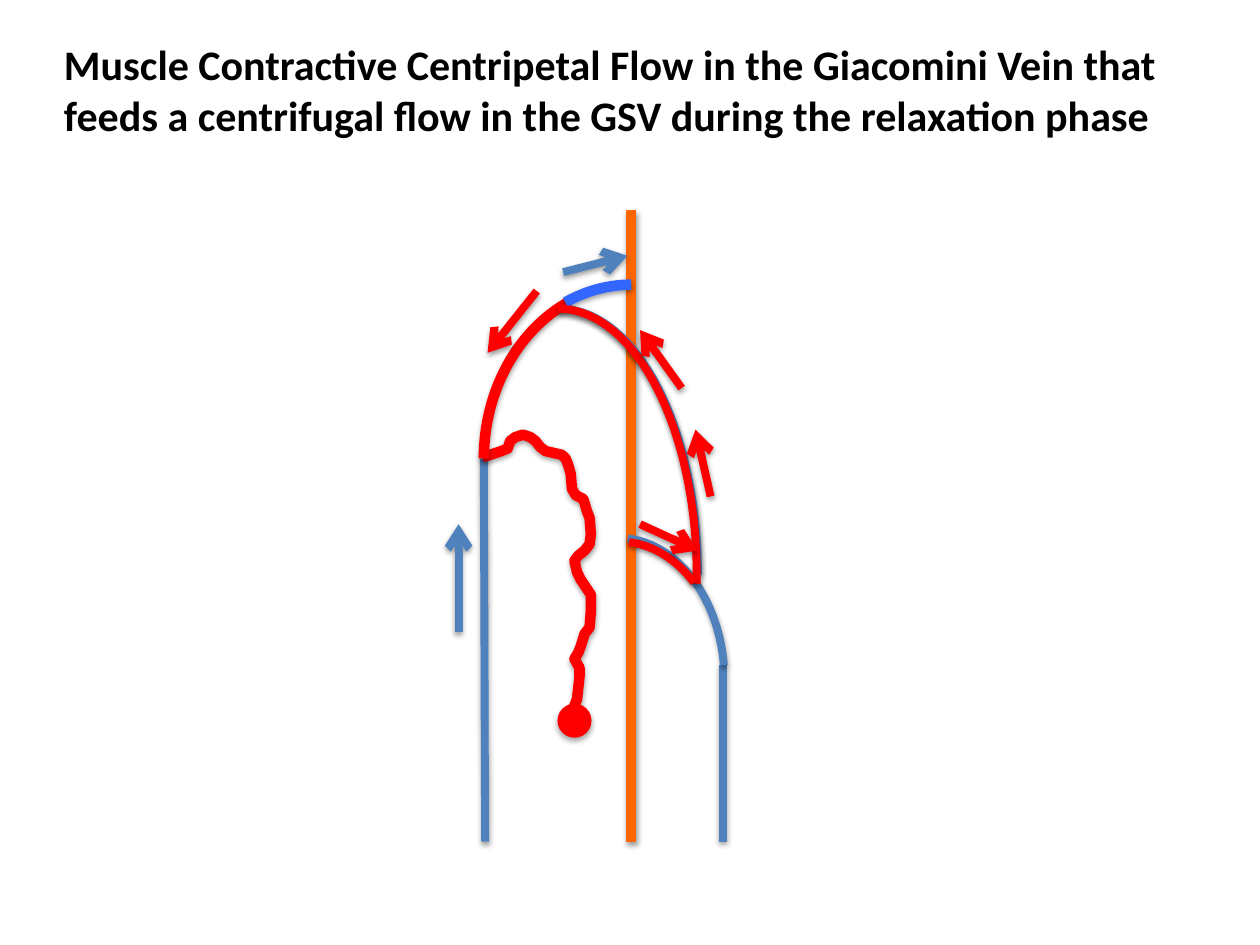
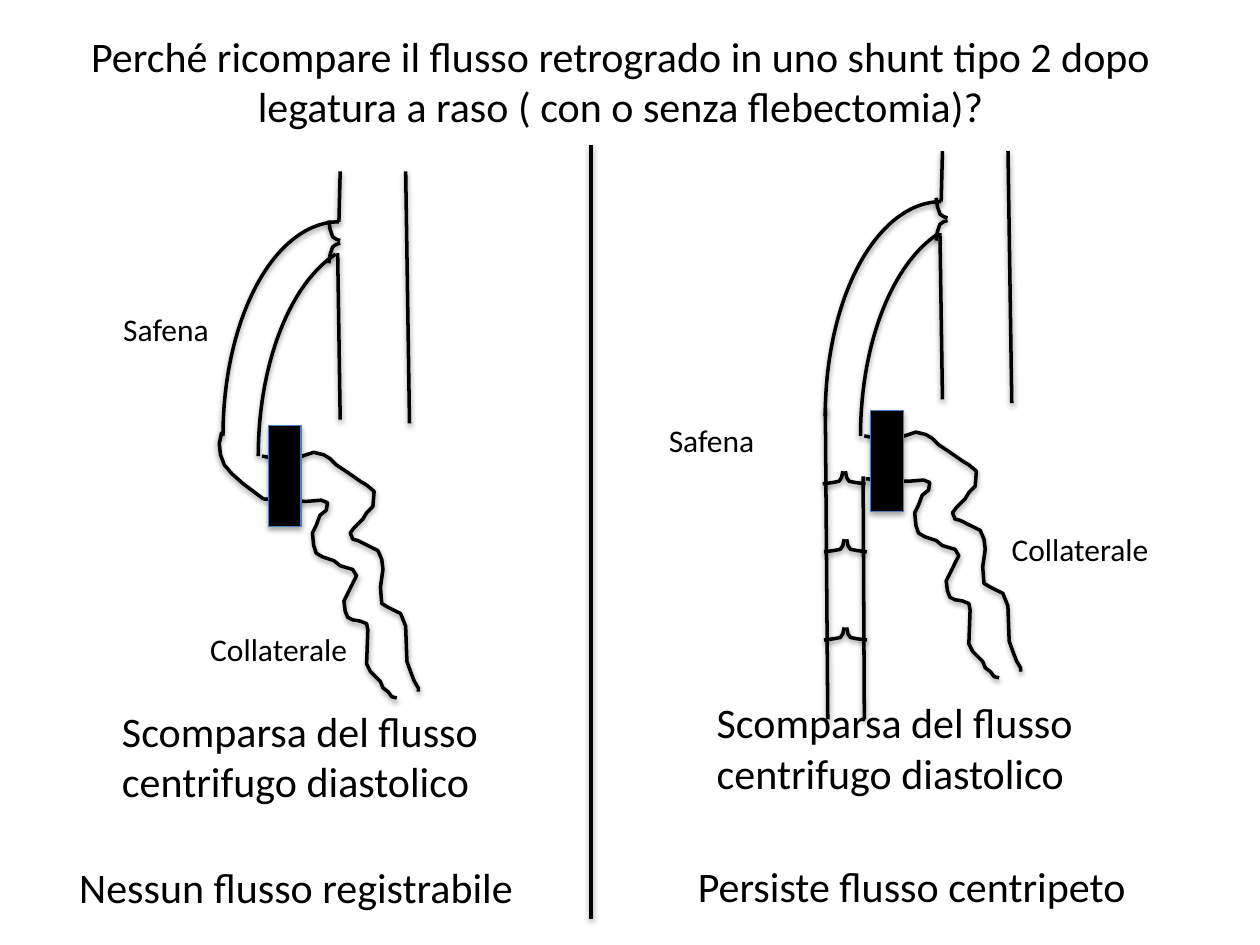
from dataclasses import dataclass
from typing import NamedTuple

from lxml import etree
from pptx import Presentation
from pptx.dml.color import RGBColor
from pptx.enum.shapes import MSO_CONNECTOR, MSO_SHAPE
from pptx.enum.text import MSO_AUTO_SIZE, PP_ALIGN
from pptx.oxml.ns import qn
from pptx.slide import Slide
from pptx.util import Emu, Pt

# Shared look
STRAIGHT = MSO_CONNECTOR.STRAIGHT
ARC, OVAL, RECTANGLE = MSO_SHAPE.ARC, MSO_SHAPE.OVAL, MSO_SHAPE.RECTANGLE
FIT_SHAPE = MSO_AUTO_SIZE.SHAPE_TO_FIT_TEXT
LEFT, CENTER = PP_ALIGN.LEFT, PP_ALIGN.CENTER

BLACK = RGBColor(0x00, 0x00, 0x00)
RED = RGBColor(0xFF, 0x00, 0x00)
BLUE = RGBColor(0x4F, 0x81, 0xBD)
BRIGHT_BLUE = RGBColor(0x33, 0x66, 0xFF)
EDGE_BLUE = RGBColor(0x4B, 0x7E, 0xBC)
ORANGE = RGBColor(0xFF, 0x66, 0x00)

FONT = "Calibri"
LARGE, SMALL = 24, 18
EMU_PER_PX = 9144  # 100 px to the inch
ARC_UNITS_PER_DEGREE = 0.6


def px(length: int) -> Emu:
    return Emu(length * EMU_PER_PX)


class Point(NamedTuple):
    x: int
    y: int


class Frame(NamedTuple):
    left: int
    top: int
    width: int
    height: int


class Stroke(NamedTuple):
    color: RGBColor
    width: float


@dataclass(frozen=True)
class Line:
    start: Point
    end: Point
    stroke: Stroke
    arrow: bool = False


@dataclass(frozen=True)
class Arc:
    frame: Frame
    stroke: Stroke
    start: float = 270
    end: float = 0
    rotation: int = 0
    flipped: bool = False


@dataclass(frozen=True)
class Label:
    frame: Frame
    text: str
    size: int = LARGE
    align: PP_ALIGN = LEFT
    bold: bool = False
    wrap: bool = True


ORIGIN = Point(0, 0)
THIN_BLACK = Stroke(BLACK, 2)
BLUE_VEIN = Stroke(BLUE, 4.5)
RED_VEIN = Stroke(RED, 4.5)
THICK_RED = Stroke(RED, 6)


# Drawing tools
def add_shadow(shape, opacity: int = 38, distance: int = 20000) -> None:
    effects = etree.SubElement(shape._element.spPr, qn("a:effectLst"))
    shadow = etree.SubElement(effects, qn("a:outerShdw"), blurRad="40000",
                              dist=str(distance), dir="5400000", rotWithShape="0")
    color = etree.SubElement(shadow, qn("a:srgbClr"), val=str(BLACK))
    etree.SubElement(color, qn("a:alpha"), val=str(opacity * 1000))


def set_stroke(shape, stroke: Stroke) -> None:
    shape.line.color.rgb = stroke.color
    shape.line.width = Pt(stroke.width)


def draw_line(page: Slide, line: Line, shift: Point = ORIGIN) -> None:
    connector = page.shapes.add_connector(
        STRAIGHT, px(line.start.x + shift.x), px(line.start.y + shift.y),
        px(line.end.x + shift.x), px(line.end.y + shift.y))
    set_stroke(connector, line.stroke)
    if line.arrow:
        outline = connector._element.spPr.find(qn("a:ln"))
        etree.SubElement(outline, qn("a:tailEnd"), type="arrow")
    add_shadow(connector)


def draw_arc(page: Slide, arc: Arc, shift: Point = ORIGIN) -> None:
    left, top, width, height = arc.frame
    shape = page.shapes.add_shape(ARC, px(left + shift.x), px(top + shift.y),
                                  px(width), px(height))
    shape.adjustments[0] = arc.start * ARC_UNITS_PER_DEGREE
    shape.adjustments[1] = arc.end * ARC_UNITS_PER_DEGREE
    shape.rotation = arc.rotation
    if arc.flipped:
        shape._element.spPr.find(qn("a:xfrm")).set("flipH", "1")
    shape.fill.background()
    set_stroke(shape, arc.stroke)
    add_shadow(shape)


def draw_curve(page: Slide, points: list[tuple[int, int]], stroke: Stroke,
               shift: Point = ORIGIN) -> None:
    moved = [(x + shift.x, y + shift.y) for x, y in points]
    builder = page.shapes.build_freeform(*moved[0], scale=EMU_PER_PX)
    builder.add_line_segments(moved[1:], close=False)
    shape = builder.convert_to_shape()
    shape.fill.background()
    set_stroke(shape, stroke)
    add_shadow(shape)


def draw_solid(page: Slide, kind: MSO_SHAPE, frame: Frame, fill: RGBColor,
               edge: RGBColor) -> None:
    shape = page.shapes.add_shape(kind, *map(px, frame))
    shape.fill.solid()
    shape.fill.fore_color.rgb = fill
    set_stroke(shape, Stroke(edge, 0.75))
    add_shadow(shape, 35, 23000)


def draw_label(page: Slide, label: Label) -> None:
    box = page.shapes.add_textbox(*map(px, label.frame))
    box.text_frame.word_wrap = label.wrap
    box.text_frame.auto_size = FIT_SHAPE
    para = box.text_frame.paragraphs[0]
    para.alignment = label.align
    span = para.add_run()
    span.text = label.text
    span.font.name = FONT
    span.font.size = Pt(label.size)
    span.font.bold = label.bold
    span.font.color.rgb = BLACK


# Slide 1: flow in the Giacomini vein
TRUNKS = [
    Line(Point(501, 167), Point(501, 668), Stroke(ORANGE, 6)),
    Line(Point(384, 364), Point(385, 668), BLUE_VEIN),
    Line(Point(574, 528), Point(574, 668), BLUE_VEIN),
]
RESTING_ARCS = [
    Arc(Frame(334, 245, 220, 422), BLUE_VEIN),
    Arc(Frame(407, 427, 168, 227), BLUE_VEIN, 273.68, 351.44),
]
FLOWING_ARCS = [
    Arc(Frame(384, 226, 238, 276), THICK_RED, 292.47, 0, flipped=True),
    Arc(Frame(382, 226, 238, 276), Stroke(BRIGHT_BLUE, 6), 270, 292.86, flipped=True),
    Arc(Frame(333, 245, 220, 422), RED_VEIN, 270, 3.8),
    Arc(Frame(408, 430, 168, 227), RED_VEIN, 273.68, 305.93),
]
FLOW_ARROWS = [
    Line(Point(426, 231), Point(387, 280), RED_VEIN, True),
    Line(Point(364, 502), Point(364, 416), BLUE_VEIN, True),
    Line(Point(447, 216), Point(498, 203), BLUE_VEIN, True),
    Line(Point(508, 416), Point(554, 437), RED_VEIN, True),
    Line(Point(564, 394), Point(552, 341), RED_VEIN, True),
    Line(Point(541, 308), Point(508, 262), RED_VEIN, True),
]
VARICOSE_BRANCH = [
    (383, 363), (398, 358), (403, 356), (405, 350), (409, 347), (415, 345),
    (421, 347), (425, 350), (429, 355), (433, 358), (446, 361), (449, 364),
    (451, 369), (453, 376), (454, 388), (457, 393), (463, 396), (466, 406),
    (468, 411), (469, 424), (468, 432), (464, 437), (459, 441), (456, 445),
    (458, 454), (461, 460), (469, 472), (469, 485), (468, 498), (464, 503),
    (461, 513), (459, 518), (456, 523), (460, 530), (460, 537), (458, 555),
    (456, 560), (456, 569),
]


def build_giacomini(page: Slide) -> None:
    for trunk in TRUNKS:
        draw_line(page, trunk)
    for arc in RESTING_ARCS:
        draw_arc(page, arc)
    draw_curve(page, VARICOSE_BRANCH, THICK_RED)
    draw_solid(page, OVAL, Frame(443, 559, 26, 26), RED, RED)
    for arc in FLOWING_ARCS:
        draw_arc(page, arc)
    for arrow in FLOW_ARROWS:
        draw_line(page, arrow)
    draw_label(page, Label(
        Frame(41, 26, 944, 91),
        "Muscle Contractive Centripetal Flow in the Giacomini Vein that feeds "
        "a centrifugal flow in the GSV during the relaxation phase", bold=True))


# Slide 2: the same junction, without and with a saphenous trunk below
JUNCTION_ARCS = [
    Arc(Frame(99, 254, 340, 184), THIN_BLACK, rotation=270),
    Arc(Frame(127, 270, 340, 184), THIN_BLACK, 270, 349.2, rotation=270),
]
DEEP_VEIN = [
    Line(Point(269, 176), Point(270, 136), THIN_BLACK),
    Line(Point(270, 333), Point(268, 201), THIN_BLACK),
    Line(Point(325, 336), Point(322, 136), THIN_BLACK),
]
BRANCH_UPPER_WALL = [
    (208, 362), (219, 364), (229, 364), (240, 362), (249, 359), (257, 361),
    (262, 364), (267, 369), (276, 375), (286, 382), (291, 385), (297, 390),
    (296, 402), (291, 407), (288, 412), (281, 419), (278, 423), (280, 428),
    (284, 429), (292, 433), (300, 437), (303, 444), (304, 452), (302, 466),
    (303, 479), (308, 482), (318, 487), (322, 497), (323, 525), (327, 536),
    (329, 541), (332, 546), (332, 549),
]
BRANCH_LOWER_WALL = [
    (209, 396), (243, 398), (255, 397), (260, 399), (259, 405), (254, 409),
    (251, 417), (248, 423), (249, 433), (251, 439), (256, 442), (265, 445),
    (270, 449), (280, 452), (283, 457), (281, 461), (275, 473), (273, 477),
    (274, 485), (276, 490), (280, 492), (286, 493), (291, 495), (292, 500),
    (291, 527), (294, 533), (302, 541), (304, 546), (308, 549), (311, 553),
    (315, 554),
]
SAPHENOUS_BEND = [
    (176, 343), (174, 352), (175, 361), (178, 369), (184, 376), (193, 384),
    (209, 396),
]
JUNCTION_LEAFLET = [(261, 175), (262, 182), (264, 188), (267, 190), (270, 191)]
JUNCTION_AXIS = 192
TRUNK_LEAFLET = [(653, 384), (661, 383), (666, 382), (668, 379), (669, 374)]
TRUNK_AXIS = 670
TRUNK_VALVE_SHIFTS = [Point(0, 0), Point(1, 54), Point(1, 124)]
SAPHENOUS_TRUNK = [
    Line(Point(657, 571), Point(655, 324), THIN_BLACK),
    Line(Point(686, 571), Point(685, 378), THIN_BLACK),
]
DIVIDER = Line(Point(469, 115), Point(469, 729), THIN_BLACK)
OUTCOME = "Scomparsa del flusso centrifugo diastolico"
SHUNT_LABELS = [
    Label(Frame(43, 19, 899, 91),
          "Perché ricompare il flusso retrogrado in uno shunt tipo 2 dopo "
          "legatura a raso ( con o senza flebectomia)?", align=CENTER),
    Label(Frame(88, 241, 90, 40), "Safena", SMALL, wrap=False),
    Label(Frame(521, 329, 90, 40), "Safena", SMALL, wrap=False),
    Label(Frame(793, 416, 131, 40), "Collaterale", SMALL, wrap=False),
    Label(Frame(157, 495, 131, 40), "Collaterale", SMALL, wrap=False),
    Label(Frame(87, 555, 344, 91), OUTCOME),
    Label(Frame(559, 548, 344, 91), OUTCOME),
    Label(Frame(53, 679, 369, 50), "Nessun flusso registrabile", wrap=False),
    Label(Frame(544, 678, 366, 50), "Persiste flusso centripeto", wrap=False),
]


def draw_junction(page: Slide, shift: Point, valve_shift: Point, clip: Frame) -> None:
    for arc in JUNCTION_ARCS:
        draw_arc(page, arc, shift)
    for wall in DEEP_VEIN:
        draw_line(page, wall, shift)
    for wall in (BRANCH_UPPER_WALL, BRANCH_LOWER_WALL):
        draw_curve(page, wall, THIN_BLACK, shift)
    mirrored = [(x, 2 * JUNCTION_AXIS - y) for x, y in JUNCTION_LEAFLET]
    for leaflet in (JUNCTION_LEAFLET, mirrored):
        draw_curve(page, leaflet, THIN_BLACK, valve_shift)
    draw_solid(page, RECTANGLE, clip, BLACK, EDGE_BLUE)


def build_shunt(page: Slide) -> None:
    draw_curve(page, SAPHENOUS_BEND, THIN_BLACK)
    draw_junction(page, ORIGIN, ORIGIN, Frame(213, 338, 26, 80))
    for wall in SAPHENOUS_TRUNK:
        draw_line(page, wall)
    draw_junction(page, Point(478, -16), Point(482, -18), Frame(691, 326, 26, 80))
    mirrored = [(2 * TRUNK_AXIS - x, y) for x, y in TRUNK_LEAFLET]
    for shift in TRUNK_VALVE_SHIFTS:
        for leaflet in (TRUNK_LEAFLET, mirrored):
            draw_curve(page, leaflet, THIN_BLACK, shift)
    draw_line(page, DIVIDER)
    for label in SHUNT_LABELS:
        draw_label(page, label)


def main() -> None:
    deck = Presentation()
    deck.slide_width, deck.slide_height = px(1000), px(750)
    blank = deck.slide_layouts[6]
    for build in (build_giacomini, build_shunt):
        build(deck.slides.add_slide(blank))
    deck.save("out.pptx")


if __name__ == "__main__":
    main()
